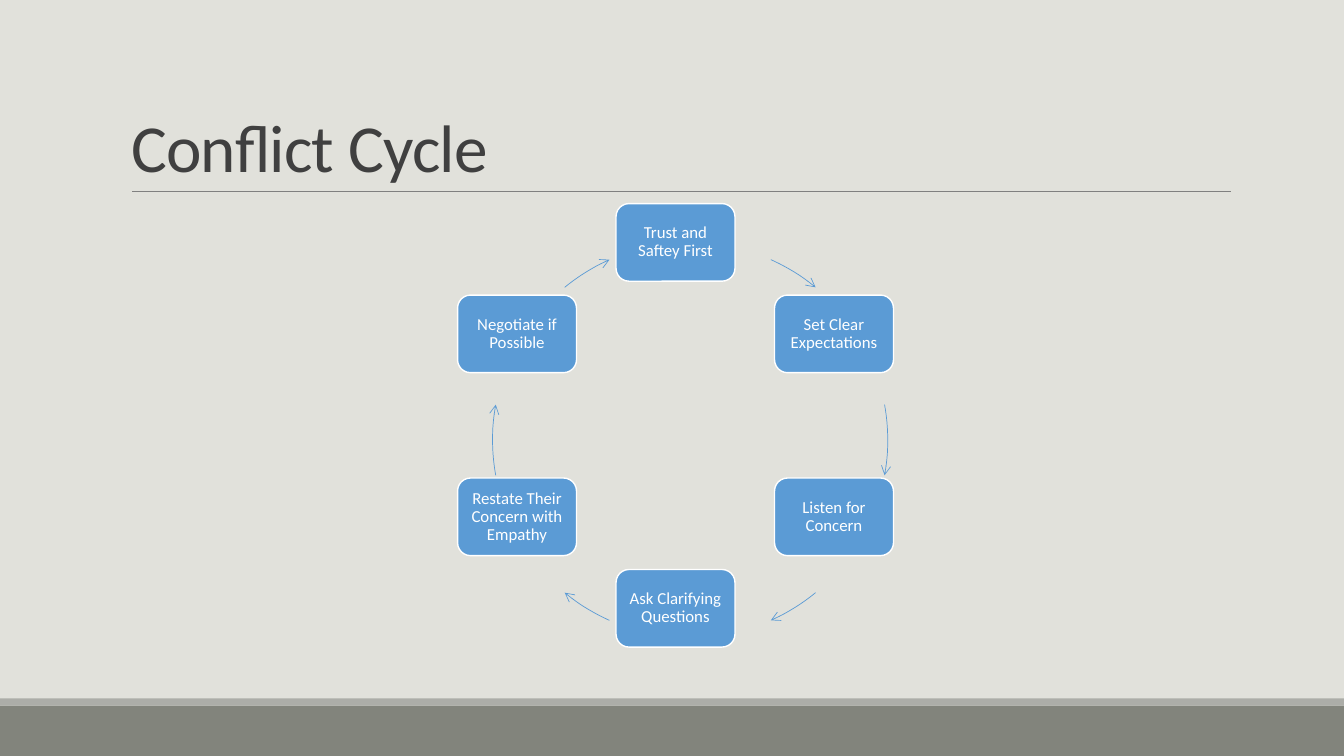
from math import cos, radians, sin

from lxml import etree
from pptx import Presentation
from pptx.dml.color import RGBColor as Rgb
from pptx.enum.shapes import MSO_CONNECTOR as Link, MSO_SHAPE as Form
from pptx.enum.text import MSO_ANCHOR as Anchor, MSO_AUTO_SIZE as Fit, PP_ALIGN as Align
from pptx.oxml.ns import qn
from pptx.util import Pt

PX = 9144  # 100 px to the inch
FONT = "Calibri"
HUES = {
    "page": "E1E1DB", "foot": "82847C", "strip": "ACADA8", "rule": "808080",
    "title": "404040", "node": "5B9BD5", "white": "FFFFFF",
}
STEPS = [
    "Trust and Saftey First", "Set Clear Expectations", "Listen for Concern",
    "Ask Clarifying Questions", "Restate Their Concern with Empathy",
    "Negotiate if Possible",
]
# Start and end angle of the arrow after each step, clockwise from the right
SPANS = [(294.1, 309.4), (349.7, 10.3), (50.6, 65.9),
         (114.1, 129.4), (169.7, 190.3), (230.6, 245.9)]


def emu(*sizes):
    return [round(size * PX) for size in sizes]


def tint(hue):
    return Rgb.from_string(HUES[hue])


def apply(target, **values):
    for name, value in values.items():
        setattr(target, name, value)


def paint(shape, fill=None, line=None, width=1):
    shape.shadow.inherit = False
    if fill:
        shape.fill.solid()
        shape.fill.fore_color.rgb = tint(fill)
    else:
        shape.fill.background()
    if line:
        shape.line.color.rgb = tint(line)
        shape.line.width = Pt(width)
    else:
        shape.line.fill.background()


def write(shape, text, size, hue, frame, para):
    """Put one formatted paragraph into a shape."""
    shape.text_frame.text = text
    apply(shape.text_frame, word_wrap=True, auto_size=Fit.NONE, **frame)
    line = shape.text_frame.paragraphs[0]
    apply(line, **para)
    run = line.runs[0]
    apply(run.font, name=FONT, size=Pt(size))
    run.font.color.rgb = tint(hue)
    return run


def add_title(slide, box):
    x, y, wide, high = box
    title = slide.shapes.title
    left, top, width, height = emu(*box)
    apply(title, left=left, top=top, width=width, height=height)
    run = write(title, "Conflict Cycle", 48, "title",
                {"vertical_anchor": Anchor.BOTTOM},
                {"alignment": Align.LEFT, "line_spacing": 0.85})
    run.font._element.set("spc", "-50")

    base = y + high
    rule = slide.shapes.add_connector(
        Link.STRAIGHT, *emu(x + 11, base, x + wide + 1, base))
    rule.line.color.rgb = tint("rule")
    rule.line.width = Pt(0.5)
    etree.SubElement(rule._element.spPr, qn("a:effectLst"))


def add_foot(slide, box):
    x, y, wide, high = box
    strip = 7
    for hue, top, tall in (("foot", y + strip, high - strip), ("strip", y, strip)):
        bar = slide.shapes.add_shape(Form.RECTANGLE, *emu(x, top, wide, tall))
        paint(bar, hue)


def add_node(group, text, box):
    node = group.shapes.add_shape(Form.ROUNDED_RECTANGLE, *emu(*box))
    paint(node, "node", "white")
    sides = ("left", "right", "top", "bottom")
    frame = {f"margin_{side}": 5 * PX for side in sides}
    write(node, text, 12, "white", frame | {"vertical_anchor": Anchor.MIDDLE},
          {"alignment": Align.CENTER, "line_spacing": 0.9})


def add_arrow(group, span, box):
    arrow = group.shapes.add_shape(Form.ARC, *emu(*box))
    for spot, angle in enumerate(span):
        arrow.adjustments[spot] = angle * 0.6  # 60000 units to the degree
    paint(arrow, line="node", width=0.5)
    etree.SubElement(arrow.line._get_or_add_ln(), qn("a:tailEnd"), type="arrow")


def add_cycle(slide, box):
    """Set the steps on a ring in the box, with an arc arrow after each."""
    x, y, wide, high = box
    node_w, node_h = 118, 77
    ring = (high - node_h) / 2
    mid_x, mid_y = x + wide / 2, y + high / 2
    arcs = (mid_x - ring, mid_y - ring, 392, 392)
    group = slide.shapes.add_group_shape()
    for spot, (text, span) in enumerate(zip(STEPS, SPANS)):
        turn = radians(360 / len(STEPS) * spot - 90)
        left = mid_x + ring * cos(turn) - node_w / 2
        top = mid_y + ring * sin(turn) - node_h / 2
        add_node(group, text, (left, top, node_w, node_h))
        add_arrow(group, span, arcs)


def main():
    deck = Presentation()
    deck.slide_width, deck.slide_height = emu(1333, 750)
    slide = deck.slides.add_slide(deck.slide_layouts[5])
    slide.background.fill.solid()
    slide.background.fill.fore_color.rgb = tint("page")
    add_foot(slide, (0, 693, 1333, 57))
    add_title(slide, (120, 31, 1100, 159))
    add_cycle(slide, (454, 202, 432, 440))
    deck.save("out.pptx")


if __name__ == "__main__":
    main()
